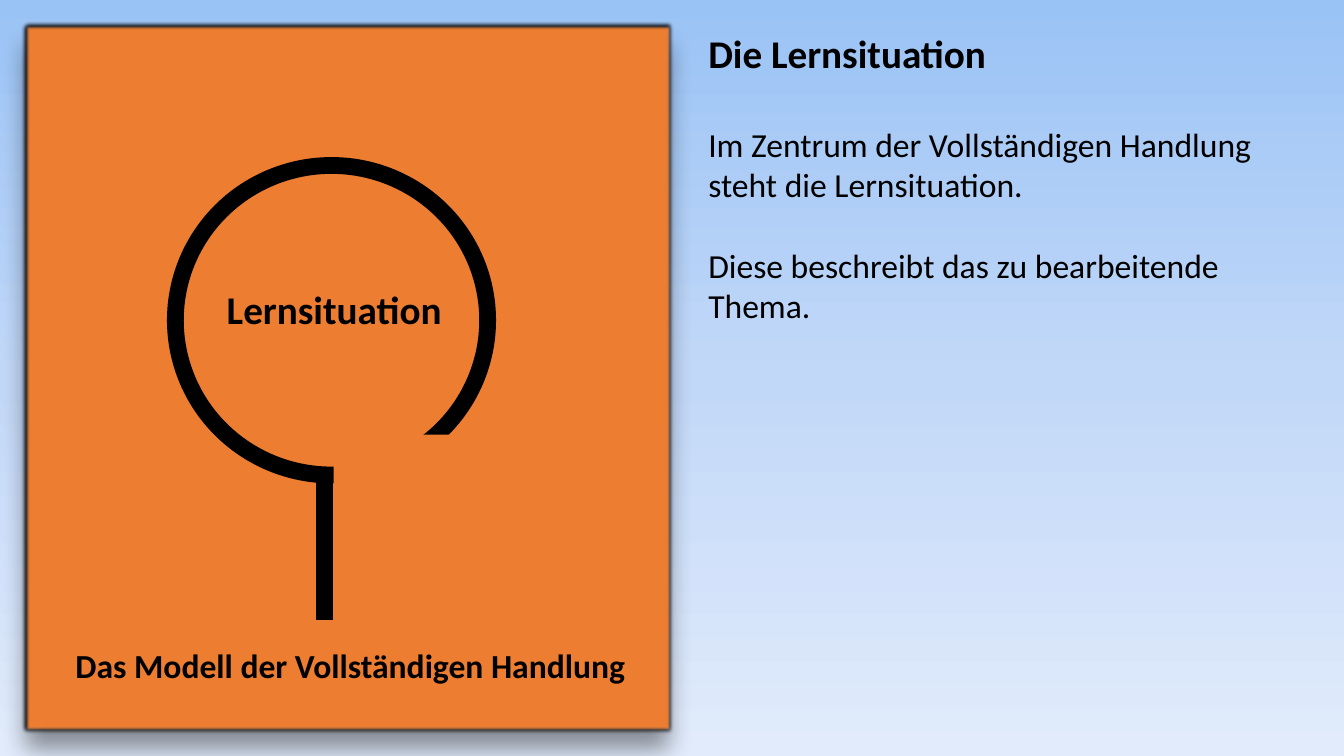
from lxml import etree
from pptx import Presentation
from pptx.dml.color import RGBColor
from pptx.enum.shapes import MSO_CONNECTOR, MSO_SHAPE
from pptx.enum.text import MSO_ANCHOR, MSO_AUTO_SIZE, PP_ALIGN
from pptx.oxml import parse_xml
from pptx.oxml.ns import nsdecls, qn
from pptx.util import Cm, Pt

RECTANGLE, ELLIPSE = MSO_SHAPE.RECTANGLE, MSO_SHAPE.OVAL
STRAIGHT = MSO_CONNECTOR.STRAIGHT
LEFT, MIDDLE = PP_ALIGN.LEFT, MSO_ANCHOR.MIDDLE
GROW, FIXED = MSO_AUTO_SIZE.SHAPE_TO_FIT_TEXT, MSO_AUTO_SIZE.NONE
TITLE_ONLY = 5

FONT = "Calibri"
BLACK, ORANGE = "000000", "ED7D31"
SKY = [(0, "9AC3F5"), (50, "C2D8F8"), (100, "E1EBFB")]


def color(hex_string):
    return RGBColor.from_string(hex_string)


def set_background(slide, stops):
    """Fill the slide from top to bottom with (percent, colour) stops."""
    stop_xml = "".join(
        f'<a:gs pos="{percent * 1000}"><a:srgbClr val="{value}"/></a:gs>'
        for percent, value in stops
    )
    background = parse_xml(
        f'<p:bg {nsdecls("p", "a")}><p:bgPr><a:gradFill rotWithShape="1">'
        f'<a:gsLst>{stop_xml}</a:gsLst><a:lin ang="5400000" scaled="0"/>'
        "</a:gradFill><a:effectLst/></p:bgPr></p:bg>"
    )
    slide.element.cSld.insert(0, background)


def set_line(line, width):
    line.color.rgb = color(BLACK)
    line.width = Pt(width)


def add_figure(slide, kind, frame, fill=None, line_width=None):
    figure = slide.shapes.add_shape(kind, *map(Cm, frame))
    figure.shadow.inherit = False
    if fill:
        figure.fill.solid()
        figure.fill.fore_color.rgb = color(fill)
    else:
        figure.fill.background()
    if line_width:
        set_line(figure.line, line_width)
    else:
        figure.line.fill.background()
    return figure


def add_soft_shadow(figure):
    """Cast a shadow downwards and soften the edge of the figure."""
    properties = figure.element.spPr
    properties.remove(properties.find(qn("a:effectLst")))
    properties.append(parse_xml(
        f'<a:effectLst {nsdecls("a")}>'
        f'<a:outerShdw blurRad="{Pt(17)}" dist="{Pt(14)}" dir="5400000" rotWithShape="0">'
        f'<a:srgbClr val="{BLACK}"><a:alpha val="40000"/></a:srgbClr></a:outerShdw>'
        f'<a:softEdge rad="{Pt(2.5)}"/></a:effectLst>'
    ))


def add_stem(slide, start, end, width):
    stem = slide.shapes.add_connector(STRAIGHT, *map(Cm, start + end))
    set_line(stem.line, width)
    etree.SubElement(stem.element.spPr, qn("a:effectLst"))


def format_paragraph(para, size, bold, gap=0):
    para.alignment = LEFT
    para.space_before = Pt(gap)
    para.font.name = FONT
    para.font.size = Pt(size)
    para.font.bold = bold
    para.font.color.rgb = color(BLACK)


def place_title(slide, text, frame):
    title = slide.shapes.title
    title.left, title.top, title.width, title.height = map(Cm, frame)
    title.text_frame.text = text
    title.text_frame.vertical_anchor = MIDDLE
    title.text_frame.auto_size = FIXED
    para = title.text_frame.paragraphs[0]
    format_paragraph(para, 28, True)
    para.line_spacing = 0.9
    slide.shapes.element.append(title.element)


def add_text(slide, frame, lines):
    """Write (text, size, bold, gap before) lines into one box."""
    box = slide.shapes.add_textbox(*map(Cm, frame))
    text_frame = box.text_frame
    text_frame.word_wrap = True
    text_frame.auto_size = GROW
    text_frame.text = "\n".join(line[0] for line in lines)
    for para, (_, size, bold, gap) in zip(text_frame.paragraphs, lines):
        format_paragraph(para, size, bold, gap)


def main():
    deck = Presentation()
    deck.slide_width, deck.slide_height = Cm(33.87), Cm(19.05)
    slide = deck.slides.add_slide(deck.slide_layouts[TITLE_ONLY])
    set_background(slide, SKY)

    panel = add_figure(slide, RECTANGLE, (0.61, 0.61, 16.31, 17.83), ORANGE, 5)
    add_soft_shadow(panel)
    place_title(slide, "Lernsituation", (5.46, 6.71, 6.1, 2.31))
    add_text(slide, (17.6, 0.61, 15.37, 7.77), [
        ("Die Lernsituation", 28, True, 0),
        ("Im Zentrum der Vollständigen Handlung steht die Lernsituation.", 24, False, 34),
        ("Diese beschreibt das zu bearbeitende Thema.", 24, False, 29),
    ])
    add_text(slide, (1.65, 16.13, 14.83, 1.27), [
        ("Das Modell der Vollständigen Handlung", 24, True, 0),
    ])

    add_stem(slide, (8.18, 15.62), (8.18, 11.86), 12)
    add_figure(slide, ELLIPSE, (4.42, 4.17, 7.87, 7.8), line_width=12)
    add_figure(slide, RECTANGLE, (8.41, 10.95, 3.12, 1.85), ORANGE)

    deck.save("out.pptx")


if __name__ == "__main__":
    main()
